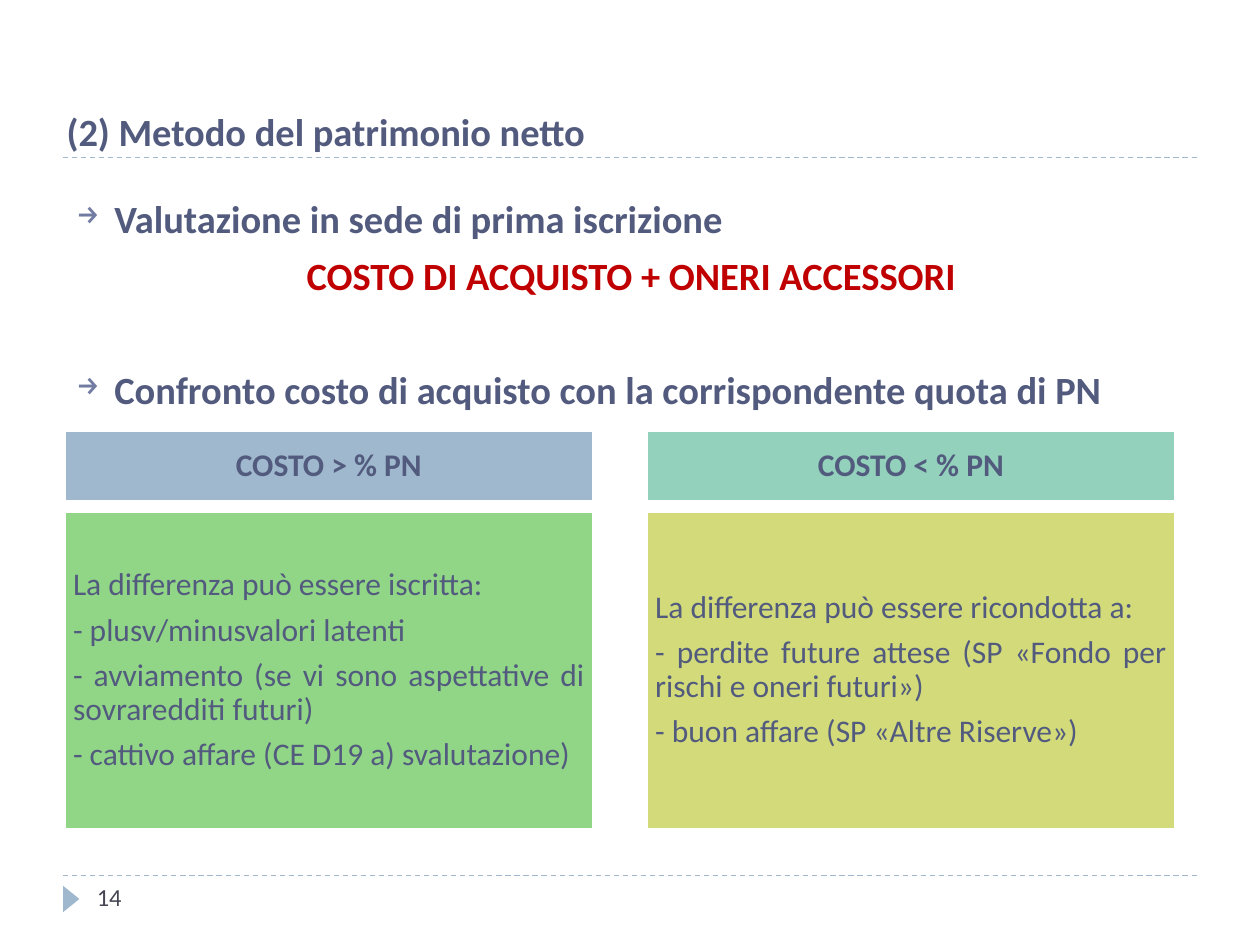
from lxml import etree
from pptx import Presentation
from pptx.dml.color import RGBColor
from pptx.enum.dml import MSO_LINE
from pptx.enum.shapes import MSO_CONNECTOR, MSO_SHAPE
from pptx.enum.text import MSO_ANCHOR, PP_ALIGN
from pptx.oxml.ns import qn
from pptx.util import Inches, Pt

LEFT, CENTER, JUSTIFY = PP_ALIGN.LEFT, PP_ALIGN.CENTER, PP_ALIGN.JUSTIFY
MIDDLE = MSO_ANCHOR.MIDDLE
RECTANGLE, TRIANGLE = MSO_SHAPE.RECTANGLE, MSO_SHAPE.ISOSCELES_TRIANGLE
STRAIGHT = MSO_CONNECTOR.STRAIGHT
DASH = MSO_LINE.DASH
INK, BLUE, RED = "525B7E", "9FB8CD", "C00000"


def rgb(value):
    return RGBColor.from_string(value)


def write(frame, text, size=18, color=INK, bold=False, align=LEFT,
          before=0, after=0, spacing=1.0, arrow=False):
    frame.word_wrap = True
    paragraph = frame.paragraphs[-1]
    if paragraph.runs:
        paragraph = frame.add_paragraph()
    paragraph.alignment = align
    paragraph.line_spacing = spacing
    paragraph.space_before, paragraph.space_after = Pt(before), Pt(after)
    run = paragraph.add_run()
    run.text = text
    run.font.name, run.font.size, run.font.bold = "Calibri", Pt(size), bold
    run.font.color.rgb = rgb(color)
    if arrow:
        properties = paragraph._p.get_or_add_pPr()
        properties.set("marL", str(Inches(0.3)))
        properties.set("indent", str(-Inches(0.3)))
        bullet_color = etree.SubElement(properties, qn("a:buClr"))
        etree.SubElement(bullet_color, qn("a:srgbClr"), val="727CA3")
        etree.SubElement(properties, qn("a:buSzPct"), val="76000")
        etree.SubElement(properties, qn("a:buChar"), char="→")


prs = Presentation()
prs.slide_width, prs.slide_height = Inches(10), Inches(7.5)
slide = prs.slides.add_slide(prs.slide_layouts[6])
shapes = slide.shapes

for y in (6.95, 1.25):
    rule = shapes.add_connector(STRAIGHT, Inches(0.5), Inches(y), Inches(9.5), Inches(y))
    rule.line.color.rgb = rgb(BLUE)
    rule.line.width = Pt(0.75)
    rule.line.dash_style = DASH
    etree.SubElement(rule._element.spPr, qn("a:effectLst"))

page_marker = shapes.add_shape(TRIANGLE, Inches(0.46), Inches(7.07), Inches(0.21), Inches(0.13))
page_marker.rotation = 90
page_marker.shadow.inherit = False
page_marker.fill.solid()
page_marker.fill.fore_color.rgb = rgb(BLUE)
page_marker.line.fill.background()

title = shapes.add_textbox(Inches(0.43), Inches(0.81), Inches(9.45), Inches(0.47))
write(title.text_frame, "(2) Metodo del patrimonio netto", size=22, bold=True)

steps = shapes.add_textbox(Inches(0.51), Inches(1.5), Inches(9), Inches(5.64)).text_frame
write(steps, "Valutazione in sede di prima iscrizione",
      size=22, bold=True, align=JUSTIFY, before=6, arrow=True)
write(steps, "COSTO DI ACQUISTO + ONERI ACCESSORI",
      size=22, color=RED, bold=True, align=CENTER, before=6)
write(steps, "Confronto costo di acquisto con la corrispondente quota di PN",
      size=22, bold=True, align=JUSTIFY, before=39, arrow=True)

cases = [
    (0.51, BLUE, "COSTO > % PN", "91D587", [
        "La differenza può essere iscritta:",
        "- plusv/minusvalori latenti",
        "- avviamento (se vi sono aspettative di sovraredditi futuri)",
        "- cattivo affare (CE D19 a) svalutazione)"]),
    (5.13, "93D1BC", "COSTO < % PN", "D2DA7A", [
        "La differenza può essere ricondotta a:",
        "- perdite future attese (SP «Fondo per rischi e oneri futuri»)",
        "- buon affare (SP «Altre Riserve»)"]),
]
for left, heading_fill, heading, detail_fill, details in cases:
    for top, height, fill, lines, bold, align in (
            (3.42, 0.56, heading_fill, [heading], True, CENTER),
            (4.06, 2.52, detail_fill, details, False, JUSTIFY)):
        panel = shapes.add_shape(RECTANGLE, Inches(left), Inches(top), Inches(4.2), Inches(height))
        panel.shadow.inherit = False
        panel.fill.solid()
        panel.fill.fore_color.rgb = rgb(fill)
        panel.line.color.rgb = rgb("FFFFFF")
        panel.line.width = Pt(1.5)
        frame = panel.text_frame
        frame.vertical_anchor = MIDDLE
        frame.margin_left = frame.margin_right = Inches(0.07)
        frame.margin_top = frame.margin_bottom = Inches(0.07)
        for line in lines:
            write(frame, line, bold=bold, align=align, after=6.3, spacing=0.9)

page_number = shapes.add_textbox(Inches(0.67), Inches(6.95), Inches(2.17), Inches(0.4))
write(page_number.text_frame, "14", size=14, color="464653")

prs.save("out.pptx")
